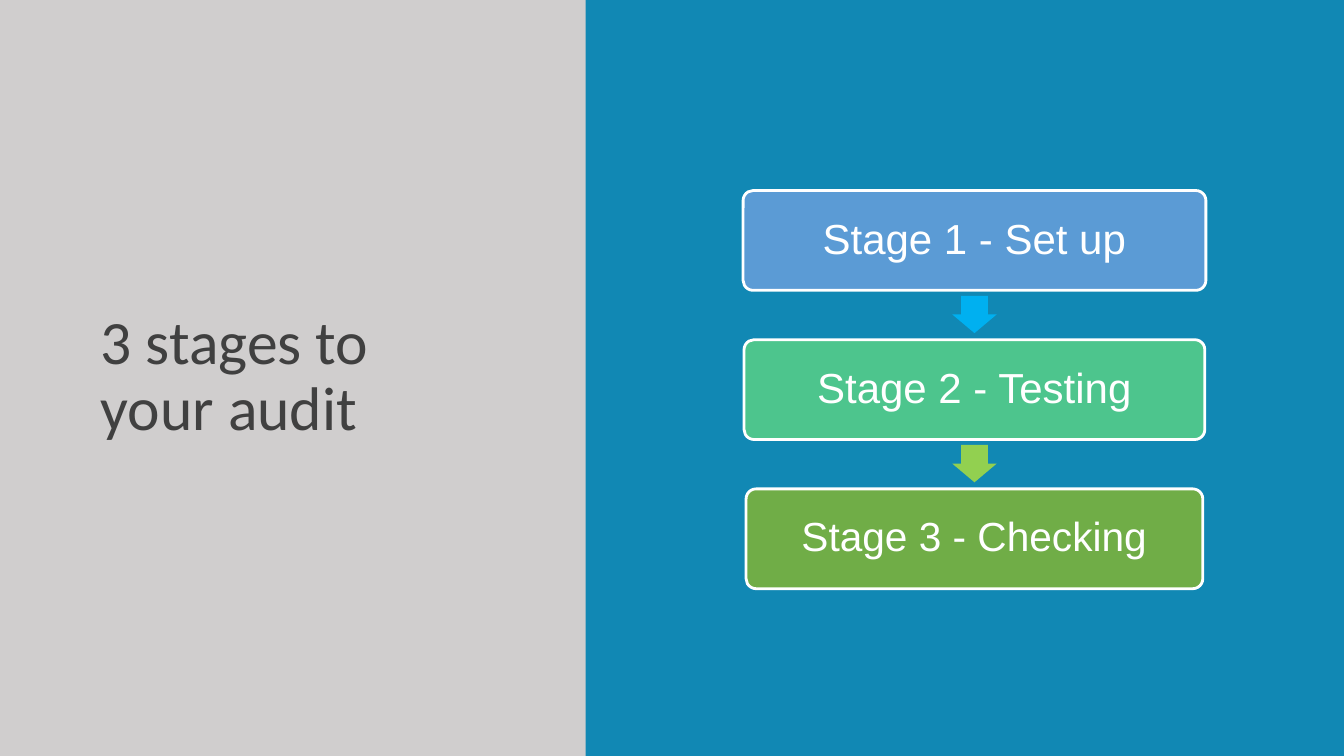
"""Build the slide that shows the three stages of an audit."""
from dataclasses import dataclass

from pptx import Presentation
from pptx.dml.color import RGBColor
from pptx.enum.shapes import MSO_SHAPE as Shape
from pptx.enum.text import MSO_ANCHOR as Anchor, PP_ALIGN as Align
from pptx.shapes.autoshape import Shape as AutoShape
from pptx.slide import Slide
from pptx.util import Emu, Pt

PX = 9144
COLORS = {
    "back": "1188B4", "panel": "D0CECE", "title": "404040", "white": "FFFFFF",
    "blue": "5B9BD5", "teal": "4DC58D", "green": "70AD47",
    "sky": "00B0F0", "lime": "92D050",
}
SLIDE_W, SLIDE_H = 1333, 750
CENTER, FIRST_TOP, PITCH, BOX_H = 966, 189, 148, 99
ARROW_W, ARROW_H, ARROW_DROP = 37, 44, 101


@dataclass(frozen=True)
class Stage:
    text: str
    width: int
    size: int
    fill: str
    arrow: str | None = None


STAGES = [
    Stage("Stage 1 - Set up", 459, 30, "blue", "sky"),
    Stage("Stage 2 - Testing", 457, 30, "teal", "lime"),
    Stage("Stage 3 - Checking", 453, 29, "green"),
]


def px(n: int) -> Emu:
    return Emu(n * PX)


def rgb(name: str) -> RGBColor:
    return RGBColor.from_string(COLORS[name])


def add_block(s: Slide, kind: Shape, x: int, y: int, w: int, h: int, fill: str) -> AutoShape:
    sp = s.shapes.add_shape(kind, px(x), px(y), px(w), px(h))
    sp.shadow.inherit = False
    sp.fill.solid()
    sp.fill.fore_color.rgb = rgb(fill)
    sp.line.fill.background()
    return sp


def write(sp: AutoShape, text: str, font: str, size: int, color: str, align: Align,
          inset_x: int, inset_y: int) -> None:
    tf = sp.text_frame
    frame = {
        "word_wrap": True, "vertical_anchor": Anchor.MIDDLE,
        "margin_left": px(inset_x), "margin_right": px(inset_x),
        "margin_top": px(inset_y), "margin_bottom": px(inset_y),
    }
    p = tf.paragraphs[0]
    r = p.add_run()
    r.text = text
    formats = [
        (tf, frame),
        (p, {"alignment": align, "line_spacing": 0.9}),
        (r.font, {"name": font, "size": Pt(size)}),
    ]
    for obj, values in formats:
        for name, value in values.items():
            setattr(obj, name, value)
    r.font.color.rgb = rgb(color)


def add_stage(s: Slide, stage: Stage, top: int) -> None:
    sp = add_block(s, Shape.ROUNDED_RECTANGLE, CENTER - stage.width // 2, top,
                   stage.width, BOX_H, stage.fill)
    sp.adjustments[0] = 0.1
    sp.line.color.rgb = rgb("white")
    sp.line.width = Pt(2)
    write(sp, stage.text, "Arial", stage.size, "white", Align.CENTER, 12, 12)
    if stage.arrow:
        arrow = add_block(s, Shape.RIGHT_ARROW, CENTER - ARROW_W // 2, top + ARROW_DROP,
                          ARROW_W, ARROW_H, stage.arrow)
        arrow.rotation = 90
        arrow.adjustments[0] = 0.6
        arrow.adjustments[1] = 0.5


def main() -> None:
    prs = Presentation()
    prs.slide_width, prs.slide_height = px(SLIDE_W), px(SLIDE_H)
    s = prs.slides.add_slide(prs.slide_layouts[6])
    s.background.fill.solid()
    s.background.fill.fore_color.rgb = rgb("back")
    add_block(s, Shape.RECTANGLE, 0, 0, 581, SLIDE_H, "panel")
    title = s.shapes.add_textbox(px(90), px(286), px(402), px(177))
    write(title, "3 stages to your audit", "Calibri", 44, "title", Align.LEFT, 10, 5)
    for i, stage in enumerate(STAGES):
        add_stage(s, stage, FIRST_TOP + i * PITCH)
    prs.save("out.pptx")


if __name__ == "__main__":
    main()
